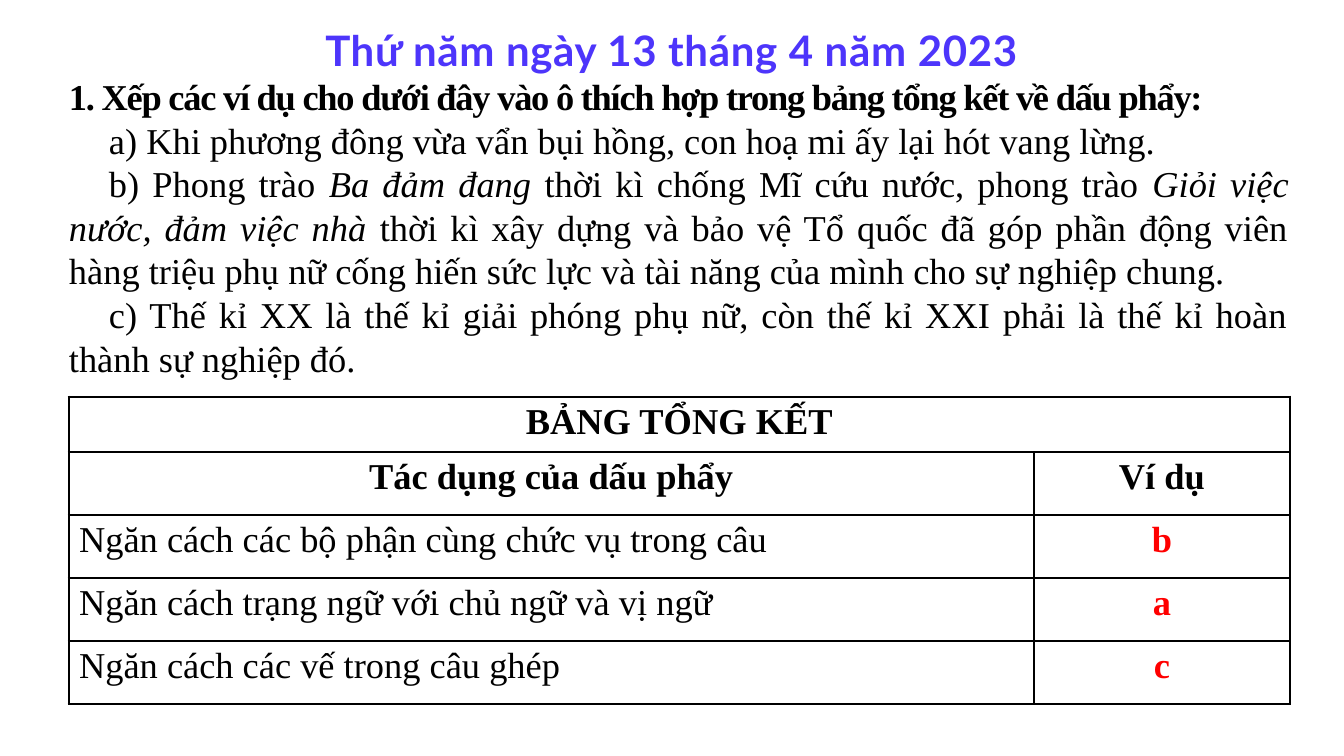
from lxml import etree
from pptx import Presentation
from pptx import util as u
from pptx.dml.color import RGBColor
from pptx.enum import text
from pptx.oxml.ns import qn

COLORS = {"title": "4D35FB", "ink": "000000", "answer": "FF0000"}
SERIF = "Times New Roman"
ALIGN = {"l": text.PP_ALIGN.LEFT, "c": text.PP_ALIGN.CENTER, "j": text.PP_ALIGN.JUSTIFY}

TITLE = "Thứ năm ngày 13 tháng 4 năm 2023"
QUESTION = "1. Xếp các ví dụ cho dưới đây vào ô thích hợp trong bảng tổng kết về dấu phẩy:"
# Each example is a list of runs; every second run is italic.
EXAMPLES = [
    ["a) Khi phương đông vừa vẩn bụi hồng, con hoạ mi ấy lại hót vang lừng."],
    ["b) Phong trào ", "Ba đảm đang ", "thời kì chống Mĩ cứu nước, phong trào ",
     "Giỏi việc nước, đảm việc nhà ",
     "thời kì xây dựng và bảo vệ Tổ quốc đã góp phần động viên hàng triệu phụ nữ "
     "cống hiến sức lực và tài năng của mình cho sự nghiệp chung."],
    ["c) Thế kỉ XX là thế kỉ giải phóng phụ nữ, còn thế kỉ XXI phải là thế kỉ "
     "hoàn thành sự nghiệp đó."],
]
SUMMARY = [
    ("BẢNG TỔNG KẾT", ""),
    ("Tác dụng của dấu phẩy", "Ví dụ"),
    ("Ngăn cách các bộ phận cùng chức vụ trong câu", "b"),
    ("Ngăn cách trạng ngữ với chủ ngữ và vị ngữ", "a"),
    ("Ngăn cách các vế trong câu ghép", "c"),
]
HEADER_ROWS = 2
COL_WIDTHS = (965, 256)
ROW_HEIGHTS = (55, 63, 63, 63, 63)
OUTER, INNER = 2.25, 1


def px(n):
    return round(n * 914400 / 100.8)


def write(p, *runs, size=26, font=SERIF, color="ink", bold=False, align="l",
          spacing=0, indent=0):
    """Fill a paragraph with runs, every second one italic; spacing is in points."""
    p.alignment = ALIGN[align]
    if indent:
        pPr = p._p.get_or_add_pPr()
        pPr.set("marL", "0")
        pPr.set("indent", str(px(indent)))
    for i, words in enumerate(runs):
        r = p.add_run()
        r.text = words
        f = r.font
        f.size, f.name, f.bold, f.italic = u.Pt(size), font, bold, i % 2 == 1
        f.color.rgb = RGBColor.from_string(COLORS[color])
        if spacing:
            f._element.set("spc", str(round(spacing * 100)))


def set_borders(cell, widths):
    tcPr = cell._tc.get_or_add_tcPr()
    for i, (side, width) in enumerate(zip("LRTB", widths)):
        ln = etree.Element(qn(f"a:ln{side}"), w=str(u.Pt(width)))
        fill = etree.SubElement(ln, qn("a:solidFill"))
        etree.SubElement(fill, qn("a:srgbClr"), val=COLORS["ink"])
        tcPr.insert(i, ln)


def add_title(s):
    sp = s.shapes.title
    sp.left, sp.top, sp.width, sp.height = px(98), px(19), px(1148), px(61)
    tf = sp.text_frame
    tf.auto_size = text.MSO_AUTO_SIZE.SHAPE_TO_FIT_TEXT
    tf.vertical_anchor = text.MSO_ANCHOR.TOP
    write(tf.paragraphs[0], TITLE, size=30, font="Lato", color="title", bold=True,
          align="c", spacing=0.5)


def add_exercise(s):
    tf = s.shapes.add_textbox(px(57), px(68), px(1244), px(321)).text_frame
    tf.word_wrap = True
    tf.auto_size = text.MSO_AUTO_SIZE.SHAPE_TO_FIT_TEXT
    tf.margin_left = tf.margin_right = px(12)
    tf.margin_top = tf.margin_bottom = px(6)
    write(tf.paragraphs[0], QUESTION, bold=True, align="j", spacing=-0.9)
    for runs in EXAMPLES:
        write(tf.add_paragraph(), *runs, align="j", indent=40)


def add_summary(s):
    rows, cols = len(ROW_HEIGHTS), len(COL_WIDTHS)
    frame = s.shapes.add_table(rows, cols, px(69), px(397),
                               px(sum(COL_WIDTHS)), px(sum(ROW_HEIGHTS)))
    table = frame.table
    table.first_row = table.horz_banding = False
    for column, width in zip(table.columns, COL_WIDTHS):
        column.width = px(width)
    for row, height in zip(table.rows, ROW_HEIGHTS):
        row.height = px(height)
    table.cell(0, 0).merge(table.cell(0, cols - 1))
    for r, line in enumerate(SUMMARY):
        for c, words in enumerate(line):
            cell = table.cell(r, c)
            cell.fill.background()
            at_edge = (c == 0 or cell.is_spanned,
                       c == cols - 1 or cell.is_merge_origin,
                       r == 0, r == rows - 1)
            set_borders(cell, [OUTER if edge else INNER for edge in at_edge])
            if cell.is_spanned:
                continue
            header, answer = r < HEADER_ROWS, r >= HEADER_ROWS and c == 1
            write(cell.text_frame.paragraphs[0], words, bold=header or answer,
                  align="c" if header or answer else "l",
                  color="answer" if answer else "ink")


def main():
    prs = Presentation()
    prs.slide_width, prs.slide_height = px(1344), px(756)
    s = prs.slides.add_slide(prs.slide_layouts[5])
    add_title(s)
    add_exercise(s)
    add_summary(s)
    prs.save("out.pptx")


if __name__ == "__main__":
    main()
